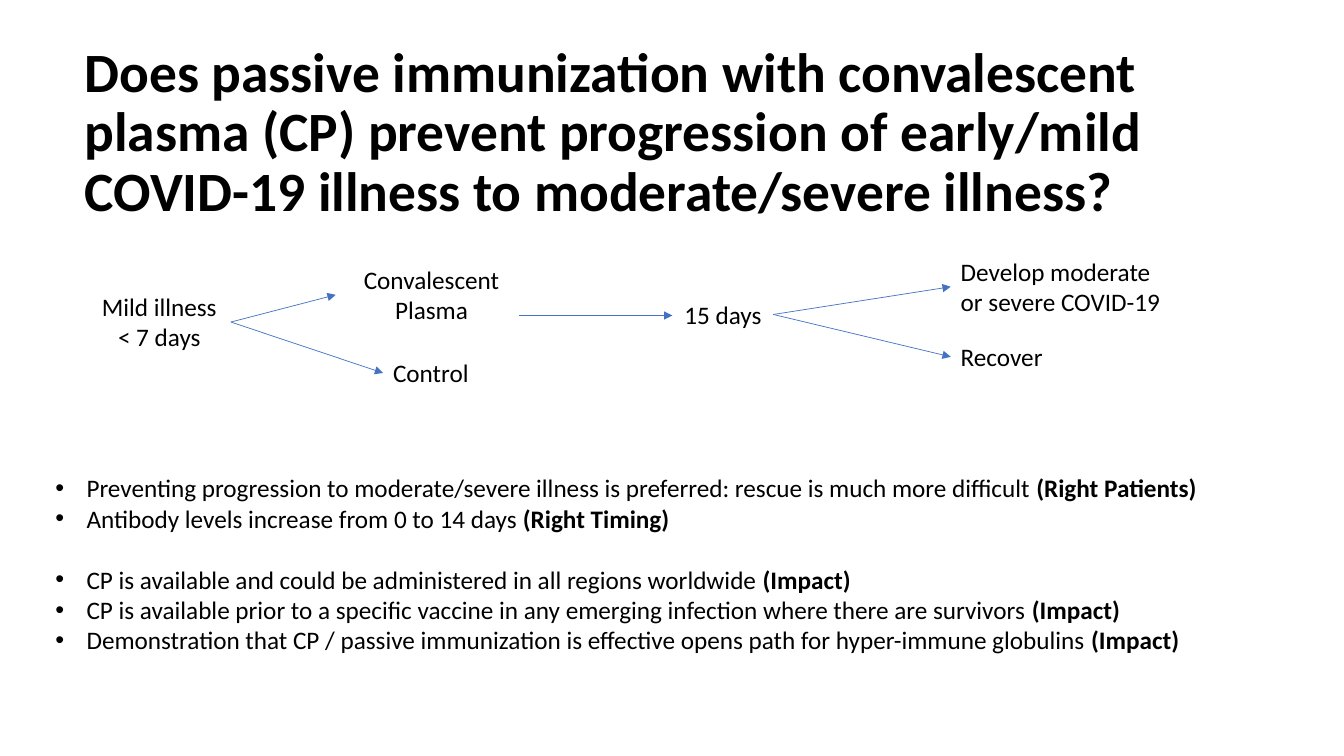
from pptx import Presentation
from pptx import util as u
from pptx.dml.color import RGBColor
from pptx.enum import shapes, text
from pptx.oxml.ns import qn
from lxml import etree

COLORS = {"ink": "000000", "arrow": "4472C4"}
FONT = "Calibri"
CENTER = text.PP_ALIGN.CENTER

TITLE = ("Does passive immunization with convalescent plasma (CP) prevent "
         "progression of early/mild COVID-19 illness to moderate/severe illness?")

# plain part, bold part, points of space before
POINTS = [
    ("Preventing progression to moderate/severe illness is preferred: "
     "rescue is much more difficult ", "(Right Patients)", 0),
    ("Antibody levels increase from 0 to 14 days ", "(Right Timing)", 0),
    ("CP is available and could be administered in all regions worldwide",
     " (Impact)", 22),
    ("CP is available prior to a specific vaccine in any emerging infection "
     "where there are survivors ", "(Impact)", 0),
    ("Demonstration that CP / passive immunization is effective opens path "
     "for hyper-immune globulins ", "(Impact)", 0),
]

# name: text, (left, top, width, height), format
STEPS = {
    "mild": ("Mild illness < 7 days", (0.87, 2.84, 1.42, 0.71), {"align": CENTER}),
    "plasma": ("Convalescent Plasma", (3.33, 2.57, 1.9, 0.71), {"align": CENTER}),
    "control": ("Control", (3.8, 3.5, 0.96, 0.4), {"wrap": False}),
    "days": ("15 days", (6.69, 2.92, 0.98, 0.4), {"wrap": False}),
    "severe": ("Develop moderate or severe COVID-19", (9.43, 2.49, 2.31, 0.71), {}),
    "recover": ("Recover", (9.43, 3.34, 1.02, 0.4), {"wrap": False}),
}
BRANCHES = [("mild", "plasma"), ("mild", "control"),
            ("days", "severe"), ("days", "recover")]
WAIT = (5.15, 3.13, 6.67, 3.13)


def add_text(slide, paras, place, size=18, bold=False, align=None, wrap=True,
             anchor=text.MSO_ANCHOR.TOP, spacing=None, bullet=False):
    """Each paragraph is (plain part, bold part, space before)."""
    box = slide.shapes.add_textbox(*map(u.Inches, place))
    frame = box.text_frame
    frame.word_wrap = wrap
    frame.vertical_anchor = anchor
    for i, (plain, strong, gap) in enumerate(paras):
        para = frame.add_paragraph() if i else frame.paragraphs[0]
        if bullet:
            add_bullet(para)
        if align is not None:
            para.alignment = align
        if spacing:
            para.line_spacing = spacing
        if gap:
            para.space_before = u.Pt(gap)
        for words, heavy in ((plain, bold), (strong, True)):
            if words:
                run = para.add_run()
                run.text = words
                run.font.name = FONT
                run.font.size = u.Pt(size)
                run.font.bold = heavy
                run.font.color.rgb = RGBColor.from_string(COLORS["ink"])
    return box


def add_bullet(para):
    props = para._p.get_or_add_pPr()
    indent = u.Inches(0.31)
    props.set("marL", str(indent))
    props.set("indent", str(-indent))
    font = etree.SubElement(props, qn("a:buFont"))
    font.set("typeface", "Arial")
    mark = etree.SubElement(props, qn("a:buChar"))
    mark.set("char", "•")


def add_arrow(slide, ends):
    line = slide.shapes.add_connector(shapes.MSO_CONNECTOR.STRAIGHT,
                                      *map(u.Inches, ends))
    line.line.color.rgb = RGBColor.from_string(COLORS["arrow"])
    line.line.width = u.Pt(0.5)
    head = etree.SubElement(line.line._get_or_add_ln(), qn("a:tailEnd"))
    head.set("type", "triangle")
    etree.SubElement(line._element.spPr, qn("a:effectLst"))
    return line


def main():
    deck = Presentation()
    deck.slide_width, deck.slide_height = u.Inches(13.33), u.Inches(7.5)
    slide = deck.slides.add_slide(deck.slide_layouts[6])

    add_text(slide, [(TITLE, "", 0)], (0.74, 0.4, 12.28, 1.86), size=39.6,
             bold=True, anchor=text.MSO_ANCHOR.MIDDLE, spacing=0.9)
    add_text(slide, POINTS, (0.45, 4.64, 12.49, 1.92), bullet=True)

    boxes = {name: add_text(slide, [(words, "", 0)], place, **style)
             for name, (words, place, style) in STEPS.items()}
    for start, end in BRANCHES:
        arrow = add_arrow(slide, (0, 0, 1, 1))
        arrow.begin_connect(boxes[start], 3)
        arrow.end_connect(boxes[end], 1)
    add_arrow(slide, WAIT)

    deck.save("out.pptx")


if __name__ == "__main__":
    main()
